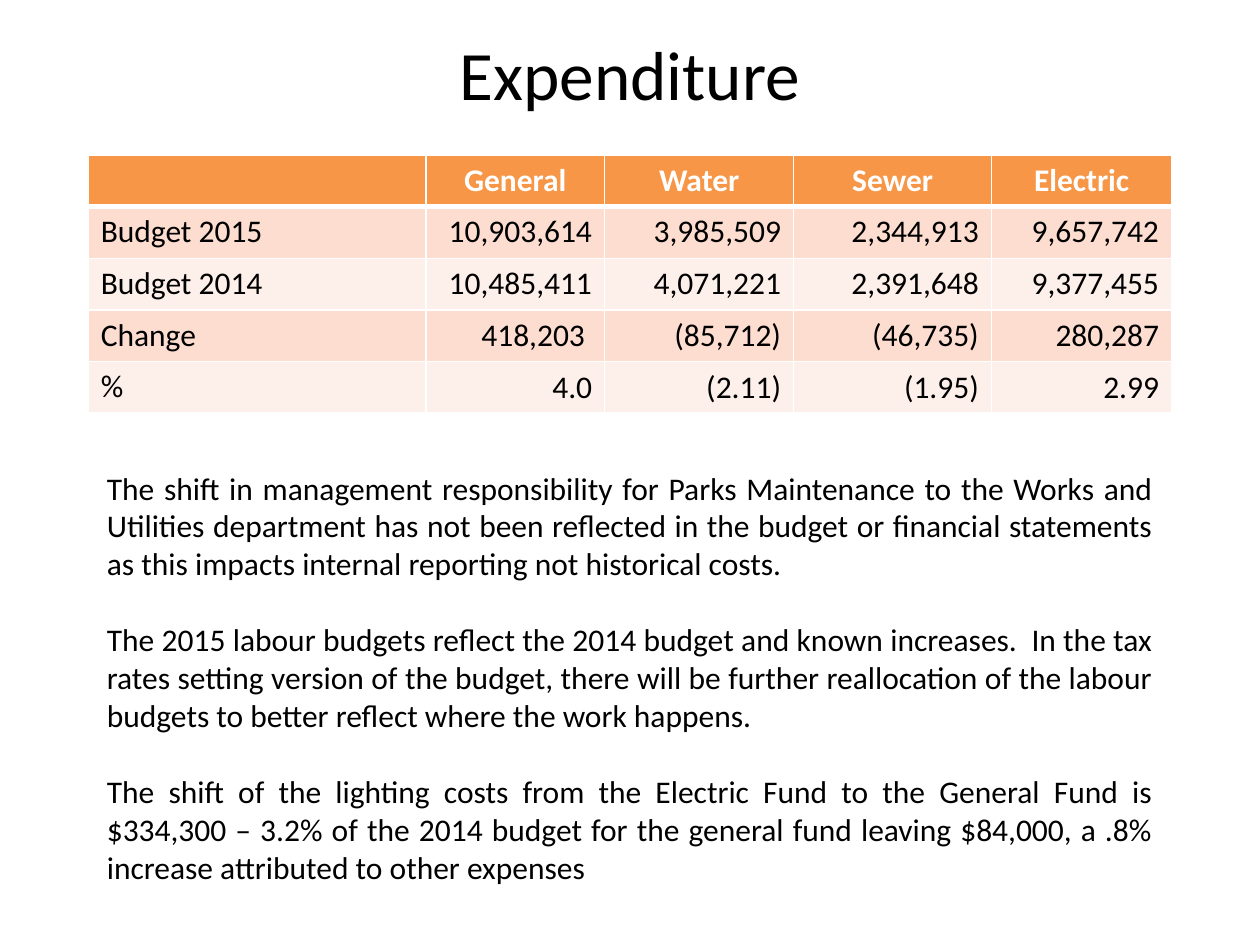
from dataclasses import dataclass

from lxml.etree import SubElement
from pptx import Presentation
from pptx.dml.color import RGBColor
from pptx.enum.text import MSO_ANCHOR, PP_ALIGN
from pptx.oxml.ns import qn
from pptx.util import Inches, Pt


@dataclass(frozen=True)
class Theme:
    font: str = "Calibri"
    title_size: float = 39.6
    body_size: float = 18
    paragraph_gap: float = 22
    text: str = "000000"
    header_text: str = "FFFFFF"
    header_fill: str = "F79646"
    bands: tuple = ("FCDDCF", "FDEFE9")
    border: str = "FFFFFF"
    thin: float = 1
    thick: float = 3


THEME = Theme()
SLIDE_WIDTH, SLIDE_HEIGHT = 10, 7.5
COLUMN_WIDTHS = (2.68, 1.42, 1.5, 1.57, 1.43)
ROW_HEIGHT = 0.41

BUDGET_ROWS = (
    ("", "General", "Water", "Sewer", "Electric"),
    ("Budget 2015", "10,903,614", "3,985,509", "2,344,913", "9,657,742"),
    ("Budget 2014", "10,485,411", "4,071,221", "2,391,648", "9,377,455"),
    ("Change", "418,203 ", "(85,712)", "(46,735)", "280,287"),
    ("%", "4.0", "(2.11)", "(1.95)", "2.99"),
)

COMMENTARY = (
    "The shift in management responsibility for Parks Maintenance to the Works and "
    "Utilities department has not been reflected in the budget or financial statements "
    "as this impacts internal reporting not historical costs.",
    "The 2015 labour budgets reflect the 2014 budget and known increases.  In the tax "
    "rates setting version of the budget, there will be further reallocation of the "
    "labour budgets to better reflect where the work happens.",
    "The shift of the lighting costs from the Electric Fund to the General Fund is "
    "$334,300 – 3.2% of the 2014 budget for the general fund leaving $84,000, a .8% "
    "increase attributed to other expenses",
)


def style_paragraph(paragraph, size, alignment, color=THEME.text, bold=False):
    paragraph.alignment = alignment
    paragraph.font.name = THEME.font
    paragraph.font.size = Pt(size)
    paragraph.font.bold = bold
    paragraph.font.color.rgb = RGBColor.from_string(color)


def add_text_box(slide, left, top, width, height):
    box = slide.shapes.add_textbox(
        Inches(left), Inches(top), Inches(width), Inches(height)
    )
    box.text_frame.word_wrap = True
    return box.text_frame


def add_title(slide, text):
    frame = add_text_box(slide, 0.05 * SLIDE_WIDTH, 0.25, 0.9 * SLIDE_WIDTH, 1.25)
    frame.margin_top = frame.margin_bottom = 0
    frame.vertical_anchor = MSO_ANCHOR.TOP
    frame.text = text
    style_paragraph(frame.paragraphs[0], THEME.title_size, PP_ALIGN.CENTER)


def add_commentary(slide, texts):
    frame = add_text_box(slide, 0.075 * SLIDE_WIDTH, 3.67, 0.85 * SLIDE_WIDTH, 3.43)
    frame.text = "\n".join(texts)
    for paragraph in frame.paragraphs:
        style_paragraph(paragraph, THEME.body_size, PP_ALIGN.JUSTIFY)
    for paragraph in frame.paragraphs[:-1]:
        paragraph.space_after = Pt(THEME.paragraph_gap)


def set_borders(cell, top, bottom):
    properties = cell._tc.get_or_add_tcPr()
    widths = {"L": THEME.thin, "R": THEME.thin, "T": top, "B": bottom}
    for side, width in widths.items():
        line = SubElement(properties, qn(f"a:ln{side}"), w=str(Pt(width)))
        fill = SubElement(line, qn("a:solidFill"))
        SubElement(fill, qn("a:srgbClr"), val=THEME.border)


def fill_cell(cell, text, row, column):
    header = row == 0
    set_borders(
        cell,
        top=THEME.thick if row == 1 else THEME.thin,
        bottom=THEME.thick if header else THEME.thin,
    )
    cell.fill.solid()
    color = THEME.header_fill if header else THEME.bands[(row - 1) % 2]
    cell.fill.fore_color.rgb = RGBColor.from_string(color)
    cell.vertical_anchor = MSO_ANCHOR.MIDDLE if row > 1 and column else MSO_ANCHOR.TOP
    cell.text = text
    body_alignment = PP_ALIGN.RIGHT if column else PP_ALIGN.LEFT
    style_paragraph(
        cell.text_frame.paragraphs[0],
        THEME.body_size,
        PP_ALIGN.CENTER if header else body_alignment,
        THEME.header_text if header else THEME.text,
        header,
    )


def add_budget_table(slide, rows):
    width = sum(COLUMN_WIDTHS)
    table = slide.shapes.add_table(
        len(rows), len(COLUMN_WIDTHS),
        Inches((SLIDE_WIDTH - width) / 2), Inches(1.23),
        Inches(width), Inches(ROW_HEIGHT * len(rows)),
    ).table
    for column, column_width in zip(table.columns, COLUMN_WIDTHS):
        column.width = Inches(column_width)
    for row, texts in enumerate(rows):
        table.rows[row].height = Inches(ROW_HEIGHT)
        for column, text in enumerate(texts):
            fill_cell(table.cell(row, column), text, row, column)


def main():
    presentation = Presentation()
    presentation.slide_width = Inches(SLIDE_WIDTH)
    presentation.slide_height = Inches(SLIDE_HEIGHT)
    slide = presentation.slides.add_slide(presentation.slide_layouts[6])
    add_title(slide, "Expenditure")
    add_budget_table(slide, BUDGET_ROWS)
    add_commentary(slide, COMMENTARY)
    presentation.save("out.pptx")


if __name__ == "__main__":
    main()
